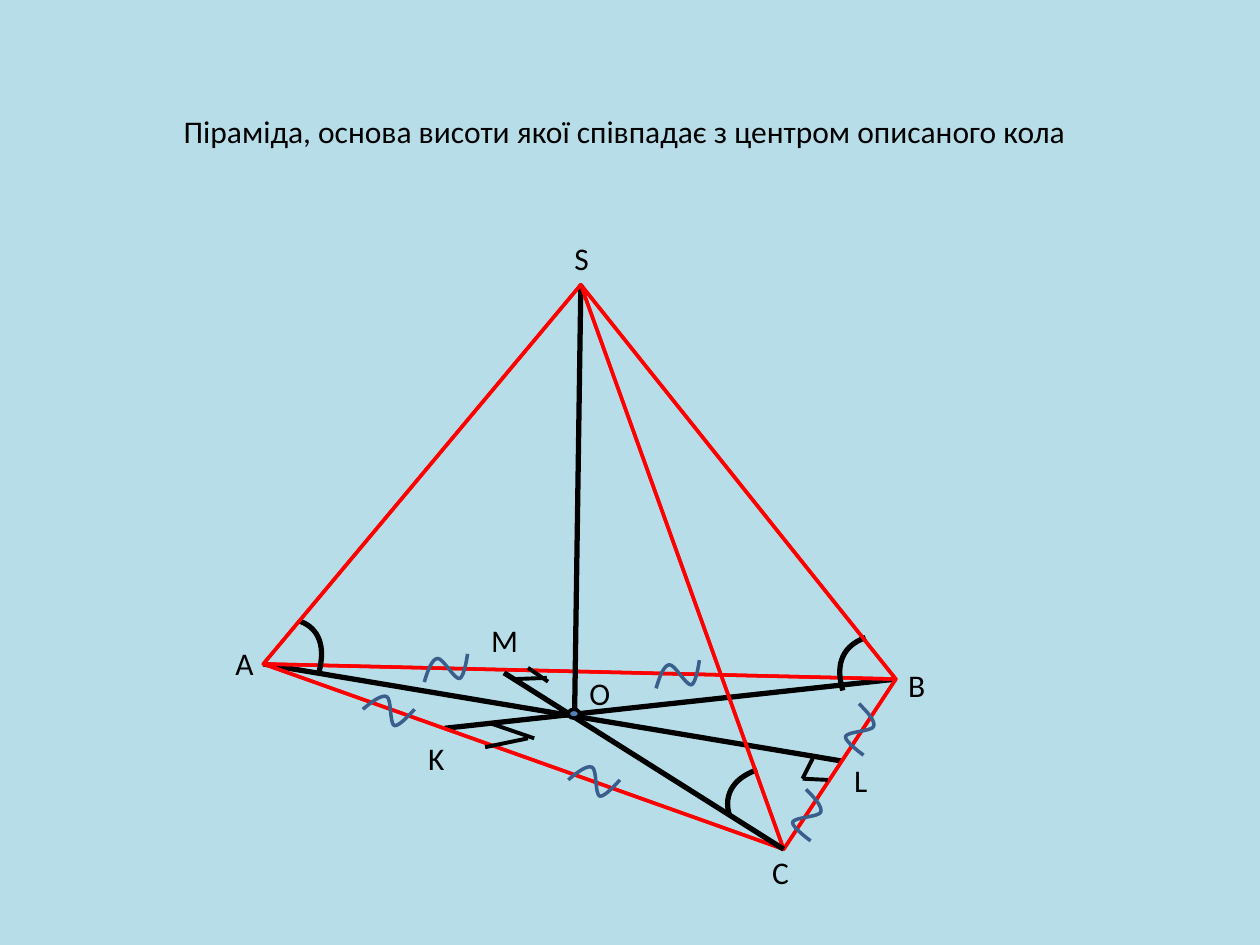
from dataclasses import dataclass
from typing import NamedTuple

from lxml.etree import SubElement
from pptx import Presentation
from pptx.dml.color import RGBColor
from pptx.enum.shapes import MSO_CONNECTOR, MSO_SHAPE
from pptx.enum.text import MSO_AUTO_SIZE
from pptx.oxml.ns import qn
from pptx.util import Inches, Pt


class Point(NamedTuple):
    x: float
    y: float


class Label(NamedTuple):
    text: str
    left: float
    top: float
    width: float


class Tick(NamedTuple):
    center: Point
    rotation: float


@dataclass(frozen=True)
class Theme:
    background: RGBColor = RGBColor(0xB7, 0xDE, 0xE8)
    black: RGBColor = RGBColor(0, 0, 0)
    edge: RGBColor = RGBColor(0xFF, 0, 0)
    tick: RGBColor = RGBColor(0x3A, 0x5F, 0x8C)
    center: RGBColor = RGBColor(0x4F, 0x81, 0xBD)
    font: str = "Calibri"
    text_size: float = 18
    thick: float = 3
    medium: float = 2.25
    thin: float = 2


THEME = Theme()

# Vertices of the pyramid, feet of the perpendiculars and the centre
S, A, B, C = Point(4.61, 2.26), Point(2.09, 5.27), Point(7.11, 5.39), Point(6.22, 6.74)
K, L, M, O = Point(3.53, 5.78), Point(6.68, 6.04), Point(4, 5.34), Point(4.56, 5.7)

# Bézier control points: a start, then three points for each section
ANGLE_ARCS = [
    [Point(5.79, 6.47), Point(5.75, 6.35), Point(5.78, 6.19), Point(6.01, 6.11)],
    [Point(6.69, 5.48), Point(6.64, 5.32), Point(6.65, 5.14), Point(6.87, 5.06)],
    [Point(2.38, 4.93), Point(2.49, 4.97), Point(2.6, 5.08), Point(2.53, 5.34)],
]
WAVE = [
    Point(-0.2, -0.01),
    Point(-0.13, -0.07), Point(-0.05, -0.13), Point(-0.01, -0.11),
    Point(0.03, -0.09), Point(0.01, 0.1), Point(0.05, 0.12),
    Point(0.09, 0.13), Point(0.21, -0.01), Point(0.21, -0.01),
]
TICKS = [
    Tick(Point(4.71, 6.2), 0), Tick(Point(5.38, 5.36), 326.9),
    Tick(Point(3.08, 5.64), 0), Tick(Point(3.54, 5.31), 326.9),
    Tick(Point(6.82, 5.79), 84.9), Tick(Point(6.4, 6.47), 84.9),
]
RIGHT_ANGLES = [
    [(Point(6.45, 6.02), Point(6.37, 6.18)), (Point(6.57, 6.19), Point(6.37, 6.18))],
    [(Point(3.89, 5.74), Point(4.24, 5.86)), (Point(4.19, 5.86), Point(3.85, 5.93))],
    [(Point(4.19, 5.3), Point(4.35, 5.41)), (Point(4.34, 5.38), Point(4.08, 5.39))],
]
LABELS = [
    Label("A", 1.77, 5.06, 0.35), Label("S", 4.46, 1.85, 0.32),
    Label("C", 6.03, 6.72, 0.34), Label("B", 7.11, 5.24, 0.34),
    Label("O", 4.58, 5.3, 0.37), Label("L", 6.68, 5.99, 0.31),
    Label("K", 3.3, 5.82, 0.33), Label("M", 3.8, 4.88, 0.42),
    Label("Піраміда, основа висоти якої співпадає з центром описаного кола",
          1.36, 0.84, 7.27),
]


def add_line(shapes, start: Point, end: Point, width: float = THEME.thick) -> None:
    connector = shapes.add_connector(
        MSO_CONNECTOR.STRAIGHT, *(Inches(value) for value in (*start, *end)))
    connector.line.color.rgb = THEME.black
    connector.line.width = Pt(width)
    SubElement(connector._element.spPr, qn("a:effectLst"))


def add_outline(shapes, points: list[Point], color: RGBColor, width: float,
                close: bool = False):
    corners = [(Inches(point.x), Inches(point.y)) for point in points]
    builder = shapes.build_freeform(*corners[0], scale=1.0)
    builder.add_line_segments(corners[1:], close=close)
    shape = builder.convert_to_shape()
    shape.fill.background()
    shape.line.color.rgb = color
    shape.line.width = Pt(width)
    shape.shadow.inherit = False
    return shape


def add_curve(shapes, controls: list[Point], color: RGBColor, width: float,
              rotation: float = 0) -> None:
    shape = add_outline(shapes, controls, color, width)
    shape.rotation = rotation
    # Join each three line segments into one Bézier section
    segments = list(shape._element.iter(qn("a:lnTo")))
    outline = segments[0].getparent()
    for first in range(0, len(segments), 3):
        section = SubElement(outline, qn("a:cubicBezTo"))
        for segment in segments[first:first + 3]:
            section.append(segment[0])
            outline.remove(segment)


def add_face(shapes, *corners: Point) -> None:
    add_outline(shapes, list(corners), THEME.edge, THEME.thin, close=True)


def add_tick(shapes, tick: Tick) -> None:
    controls = [Point(tick.center.x + x, tick.center.y + y) for x, y in WAVE]
    add_curve(shapes, controls, THEME.tick, THEME.thin, tick.rotation)


def add_text(shapes, text: str, *, left: float, top: float, width: float,
             height: float = 0.4, size: float = THEME.text_size,
             color: RGBColor = THEME.black) -> None:
    box = shapes.add_textbox(Inches(left), Inches(top), Inches(width), Inches(height))
    frame = box.text_frame
    frame.word_wrap = False
    frame.auto_size = MSO_AUTO_SIZE.SHAPE_TO_FIT_TEXT
    run = frame.paragraphs[0].add_run()
    run.text = text
    run.font.name = THEME.font
    run.font.size = Pt(size)
    run.font.color.rgb = color


def main() -> None:
    presentation = Presentation()
    presentation.slide_width, presentation.slide_height = Inches(10), Inches(7.5)
    slide = presentation.slides.add_slide(presentation.slide_layouts[6])
    slide.background.fill.solid()
    slide.background.fill.fore_color.rgb = THEME.background
    shapes = slide.shapes
    angle_c, angle_b, angle_a = ANGLE_ARCS

    # Pyramid: base lines, faces, height and equal angles, from back to front
    add_line(shapes, B, K)
    add_line(shapes, L, A)
    add_curve(shapes, angle_c, THEME.black, THEME.thick)
    add_face(shapes, A, S, B)
    add_face(shapes, B, C, A)
    add_curve(shapes, angle_b, THEME.black, THEME.thick)
    add_face(shapes, C, S, B)
    add_curve(shapes, angle_a, THEME.black, THEME.thick)
    add_line(shapes, S, O)
    add_face(shapes, A, S, C)
    add_line(shapes, C, M)

    # Centre of the circumscribed circle
    dot = shapes.add_shape(MSO_SHAPE.OVAL, Inches(4.51), Inches(5.63),
                           Inches(0.09), Inches(0.07))
    dot.fill.solid()
    dot.fill.fore_color.rgb = THEME.center
    dot.line.color.rgb = THEME.black
    dot.line.width = Pt(THEME.thin)
    dot.shadow.inherit = False

    # Right angles, marks of equal segments and text
    for sides in RIGHT_ANGLES:
        group = shapes.add_group_shape()
        for start, end in sides:
            add_line(group.shapes, start, end, THEME.medium)
    for tick in TICKS:
        add_tick(shapes, tick)
    for label in LABELS:
        add_text(shapes, label.text, left=label.left, top=label.top, width=label.width)

    presentation.save("out.pptx")


if __name__ == "__main__":
    main()
